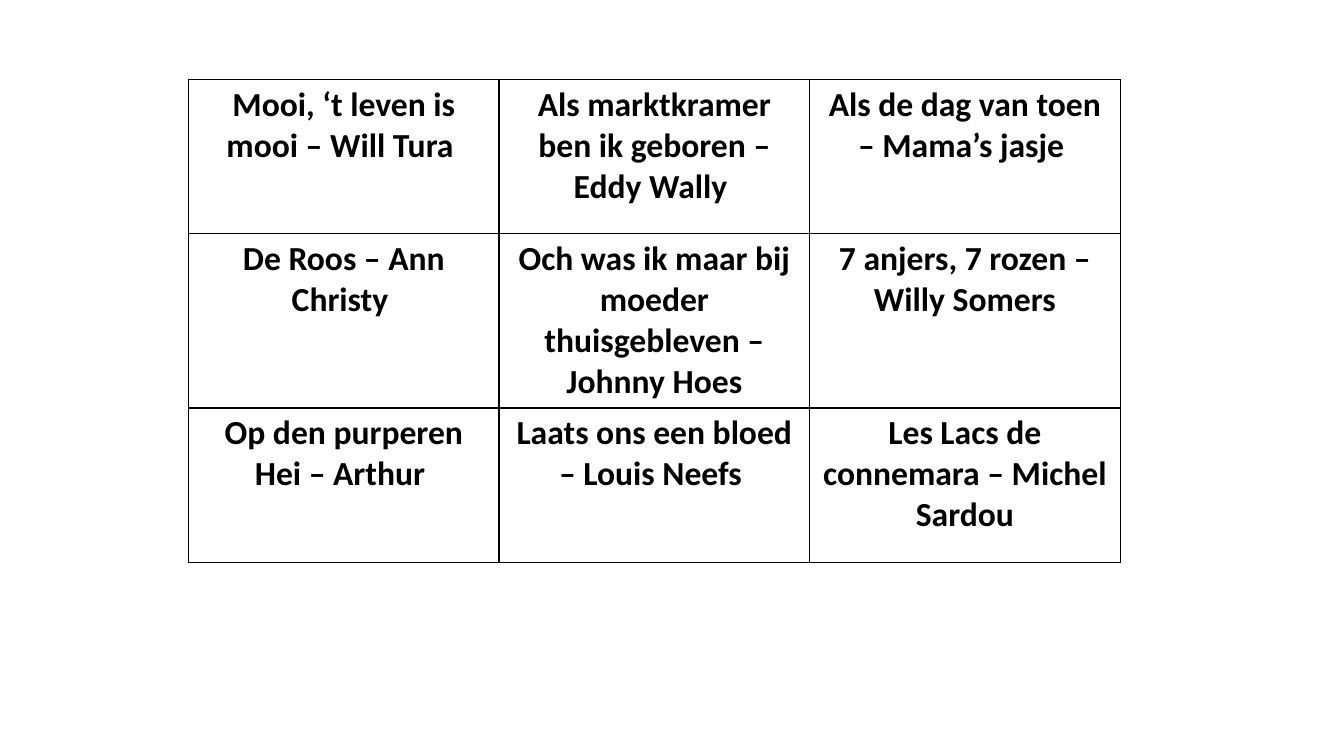
from lxml import etree
from pptx import Presentation, util as u
from pptx.dml import color
from pptx.enum import text
from pptx.oxml import ns

COLORS = {"ink": "000000", "paper": "FFFFFF"}
FONT = "Calibri"
SONGS = [
    ["Mooi, ‘t leven is mooi – Will Tura ",
     "Als marktkramer ben ik geboren – Eddy Wally ",
     "Als de dag van toen – Mama’s jasje "],
    ["De Roos – Ann Christy ",
     "Och was ik maar bij moeder thuisgebleven – Johnny Hoes",
     "7 anjers, 7 rozen – Willy Somers"],
    ["Op den purperen Hei – Arthur ",
     "Laats ons een bloed – Louis Neefs ",
     "Les Lacs de connemara – Michel Sardou"],
]


def rgb(name):
    return color.RGBColor.from_string(COLORS[name])


def add_border(cell, points=1):
    """Draw a solid line on all four sides; call before filling the cell."""
    props = cell._tc.get_or_add_tcPr()
    for side in ("lnL", "lnR", "lnT", "lnB"):
        line = etree.SubElement(props, ns.qn("a:" + side), w=str(u.Pt(points)))
        fill = etree.SubElement(line, ns.qn("a:solidFill"))
        etree.SubElement(fill, ns.qn("a:srgbClr"), val=COLORS["ink"])


def fill_cell(cell, song):
    add_border(cell)
    cell.fill.solid()
    cell.fill.fore_color.rgb = rgb("paper")
    para = cell.text_frame.paragraphs[0]
    para.alignment = text.PP_ALIGN.CENTER
    run = para.add_run()
    run.text = song
    font = run.font
    font.name, font.size, font.bold = FONT, u.Pt(24), True
    font.color.rgb = rgb("ink")


def add_card(slide, left, top, width, height):
    """Place the song grid, with equal rows and columns, in the given box."""
    rows, cols = len(SONGS), len(SONGS[0])
    box = [u.Inches(n) for n in (left, top, width, height)]
    table = slide.shapes.add_table(rows, cols, *box).table
    table.first_row = table.horz_banding = False
    for r, songs in enumerate(SONGS):
        for c, song in enumerate(songs):
            fill_cell(table.cell(r, c), song)


def main():
    deck = Presentation()
    deck.slide_width, deck.slide_height = u.Inches(13.33), u.Inches(7.5)
    slide = deck.slides.add_slide(deck.slide_layouts[6])
    add_card(slide, 1.87, 0.79, 9.24, 4.59)
    deck.save("out.pptx")


if __name__ == "__main__":
    main()
